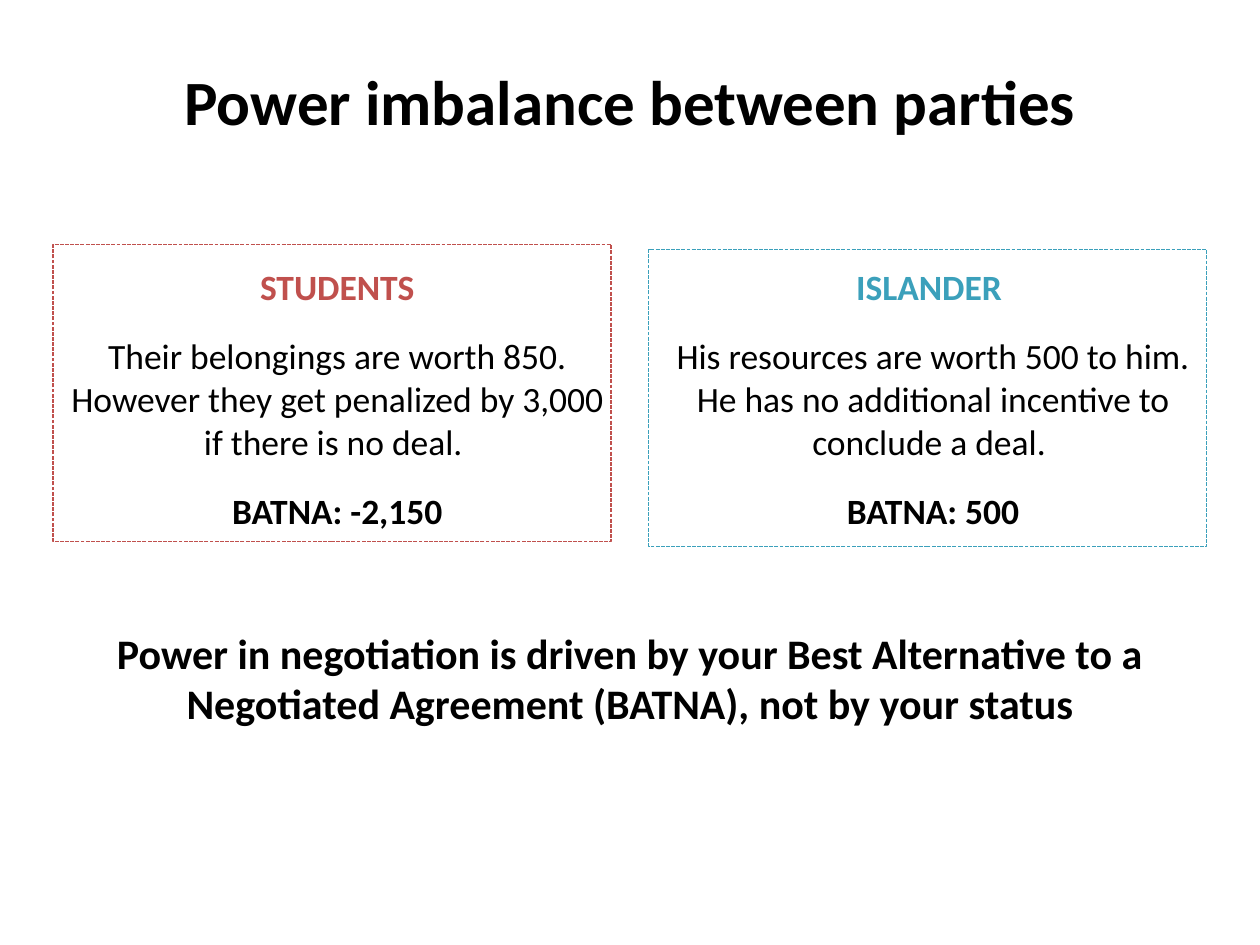
from pptx import Presentation
from pptx.dml.color import RGBColor
from pptx.enum.dml import MSO_LINE
from pptx.enum.shapes import MSO_SHAPE
from pptx.enum.text import PP_ALIGN
from pptx.util import Cm, Pt


def rgb(color):
    return RGBColor.from_string(color)


def add_text(s, x, y, w, h, paragraphs):
    """Add a centred text box; paragraphs are (text, size, bold, color, space before)."""
    tf = s.shapes.add_textbox(Cm(x), Cm(y), Cm(w), Cm(h)).text_frame
    tf.word_wrap = True
    for i, (text, size, bold, color, before) in enumerate(paragraphs):
        p = tf.paragraphs[0] if i == 0 else tf.add_paragraph()
        p.text = text
        p.alignment = PP_ALIGN.CENTER
        p.space_before = Pt(before)
        p.font.name = "Calibri"
        p.font.size = Pt(size)
        p.font.bold = bold
        p.font.color.rgb = rgb(color)


BLACK = "000000"
BODY_SIZE = 20.3
GAP = 15.5

prs = Presentation()
prs.slide_width, prs.slide_height = Cm(25.4), Cm(19.05)
s = prs.slides.add_slide(prs.slide_layouts[6])

add_text(s, 1.27, 1.14, 22.86, 3.18,
         [("Power imbalance between parties", 36, True, BLACK, 0)])

# left, frame top, text height, color, heading, two statements, BATNA
parties = [
    (1.07, 4.93, 5.82, "C0504D", "STUDENTS",
     "Their belongings are worth 850.",
     "However they get penalized by 3,000 if there is no deal. ",
     "BATNA: -2,150"),
    (13.08, 5.03, 7.47, "3BA0BB", "ISLANDER ",
     "His resources are worth 500 to him.",
     "He has no additional incentive to conclude a deal. ",
     "BATNA: 500"),
]
for x, frame_y, text_h, color, heading, worth, incentive, batna in parties:
    add_text(s, x, 5.21, 11.46, text_h, [
        (heading, BODY_SIZE, True, color, 0),
        (worth, BODY_SIZE, False, BLACK, GAP),
        (incentive, BODY_SIZE, False, BLACK, 0),
        (batna, BODY_SIZE, True, BLACK, GAP),
    ])
    sp = s.shapes.add_shape(MSO_SHAPE.RECTANGLE, Cm(x), Cm(frame_y), Cm(11.25), Cm(5.99))
    sp.shadow.inherit = False
    sp.fill.background()
    sp.line.color.rgb = rgb(color)
    sp.line.width = Pt(0.75)
    sp.line.dash_style = MSO_LINE.SQUARE_DOT

add_text(s, 1.27, 12.52, 22.86, 6.35,
         [("Power in negotiation is driven by your Best Alternative to a "
           "Negotiated Agreement (BATNA), not by your status", 24, True, BLACK, 0)])

prs.save("out.pptx")
